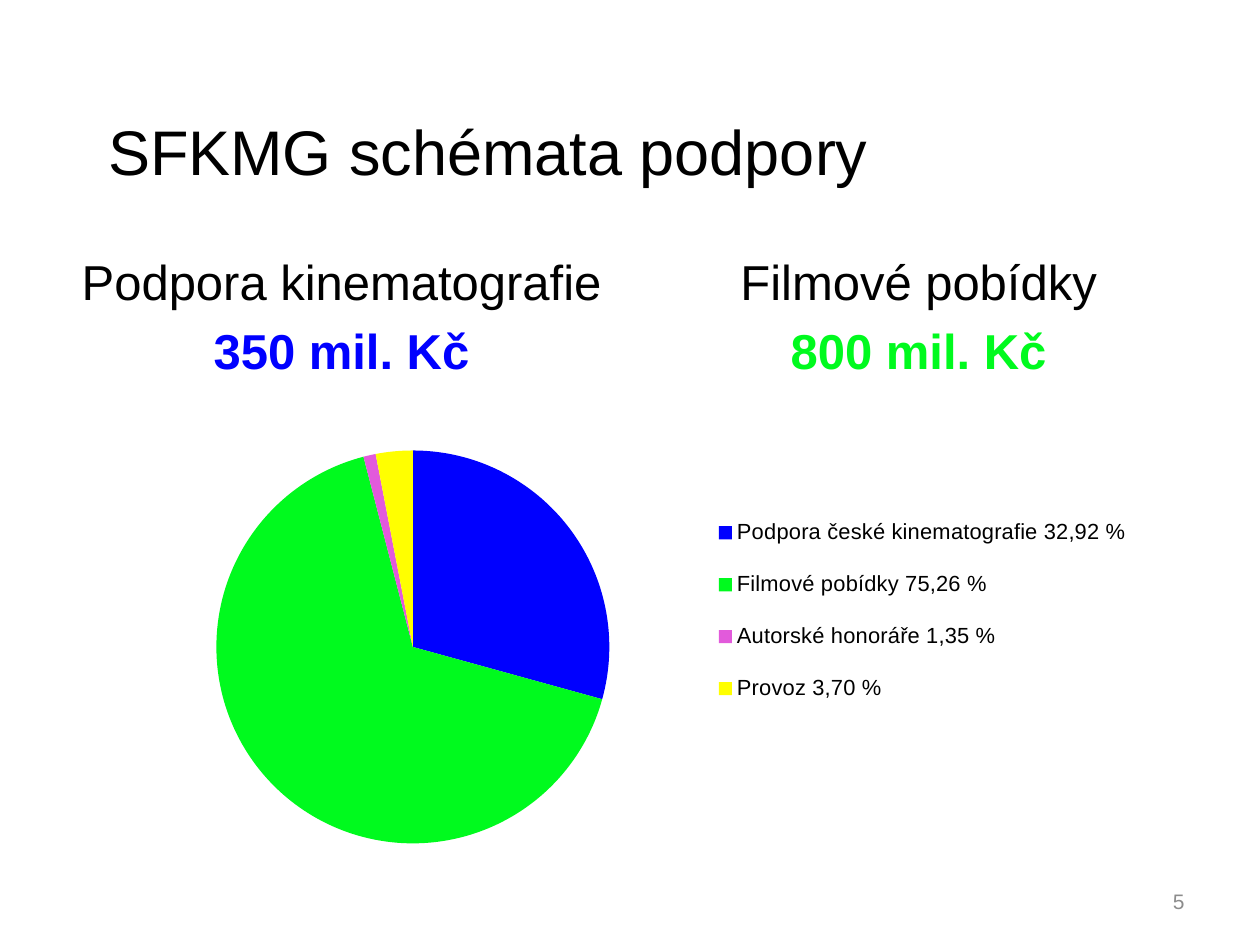
from dataclasses import dataclass

from lxml import etree
from pptx import Presentation
from pptx import util as u
from pptx.chart.data import CategoryChartData
from pptx.dml.color import RGBColor
from pptx.enum import chart as charts, text
from pptx.oxml.ns import qn

Inches = u.Inches


@dataclass(frozen=True)
class Theme:
    font: str = "Arial"
    black: str = "000000"
    gray: str = "8C8C8C"
    blue: str = "0000FF"
    green: str = "00FA1E"
    pink: str = "E25ADB"
    yellow: str = "FFFF00"
    title: float = 36
    body: float = 28
    legend: float = 12.5
    number: float = 12
    chart: float = 10


theme = Theme()


def style_font(font, size, color=theme.black, bold=False):
    font.name = theme.font
    font.size = u.Pt(size)
    font.bold = bold
    font.color.rgb = RGBColor.from_string(color)


def add_text(frame, content, size, color=theme.black, bold=False,
             align=text.PP_ALIGN.LEFT, before=0, after=0):
    """Fill the empty first paragraph of the frame, or append a new one."""
    paragraph = frame.paragraphs[0] if not frame.text else frame.add_paragraph()
    paragraph.alignment = align
    paragraph.space_before = u.Pt(before)
    paragraph.space_after = u.Pt(after)
    run = paragraph.add_run()
    run.text = content
    style_font(run.font, size, color, bold)


presentation = Presentation()
presentation.slide_width = Inches(10)
presentation.slide_height = Inches(7.5)
slide = presentation.slides.add_slide(presentation.slide_layouts[6])

# Two support schemes side by side
schemes = [
    (0.5, "Podpora kinematografie", "350 mil. Kč", theme.blue),
    (5.08, "Filmové pobídky", "800 mil. Kč", theme.green),
]
for left, name, amount, color in schemes:
    box = slide.shapes.add_textbox(Inches(left), Inches(1.95), Inches(4.42), Inches(4.95))
    frame = box.text_frame
    frame.word_wrap = True
    add_text(frame, name, theme.body, align=text.PP_ALIGN.CENTER)
    add_text(frame, amount, theme.body, color=color, bold=True,
             align=text.PP_ALIGN.CENTER, before=5.6)

# Slide number
number = slide.shapes.add_textbox(Inches(7.17), Inches(6.95), Inches(2.33), Inches(0.4))
number.text_frame.word_wrap = True
number.text_frame.vertical_anchor = text.MSO_ANCHOR.MIDDLE
add_text(number.text_frame, "5", theme.number, color=theme.gray, align=text.PP_ALIGN.RIGHT)

# Title
title = slide.shapes.add_textbox(Inches(0.76), Inches(0.84), Inches(6.29), Inches(0.71))
title.text_frame.word_wrap = False
title.text_frame.auto_size = text.MSO_AUTO_SIZE.SHAPE_TO_FIT_TEXT
add_text(title.text_frame, "SFKMG schémata podpory", theme.title, after=18)

# Pie of the budget shares
shares = [
    ("Podpora české kinematografie 32,92 %", 29, theme.blue),
    ("Filmové pobídky 75,26 %", 66, theme.green),
    ("Autorské honoráře 1,35 %", 1, theme.pink),
    ("Provoz 3,70 %", 3, theme.yellow),
]
data = CategoryChartData()
data.categories = [label for label, value, color in shares]
data.add_series("Series 1", [value for label, value, color in shares])
pie = slide.shapes.add_chart(charts.XL_CHART_TYPE.PIE, Inches(0.79), Inches(3.44),
                             Inches(8.43), Inches(3.39), data).chart
style_font(pie.font, theme.chart)
pie.has_title = False
pie.has_legend = True
pie.legend.position = charts.XL_LEGEND_POSITION.RIGHT
pie.legend.include_in_layout = False
style_font(pie.legend.font, theme.legend)

plot = pie.plots[0]
plot.vary_by_categories = True
for index, (label, value, color) in enumerate(shares):
    point = plot.series[0].points[index]
    point.format.fill.solid()
    point.format.fill.fore_color.rgb = RGBColor.from_string(color)
    point.format.line.fill.background()

# Manual places, as fractions of the chart: x, y, width, height
plot_area = plot._element.getparent()
legend = pie.legend._element
for element, place in [(plot_area, (0.11, 0.04, 0.37, 0.92)),
                       (legend, (0.57, 0.14, 0.41, 0.55))]:
    for old in element.findall(qn("c:layout")):
        element.remove(old)
    layout = etree.Element(qn("c:layout"))
    manual = etree.SubElement(layout, qn("c:manualLayout"))
    if element is plot_area:
        etree.SubElement(manual, qn("c:layoutTarget")).set("val", "inner")
    for tag in ("xMode", "yMode"):
        etree.SubElement(manual, qn(f"c:{tag}")).set("val", "edge")
    for tag, fraction in zip("xywh", place):
        etree.SubElement(manual, qn(f"c:{tag}")).set("val", str(fraction))
    element.insert(0 if element is plot_area else 1, layout)

presentation.save("out.pptx")
